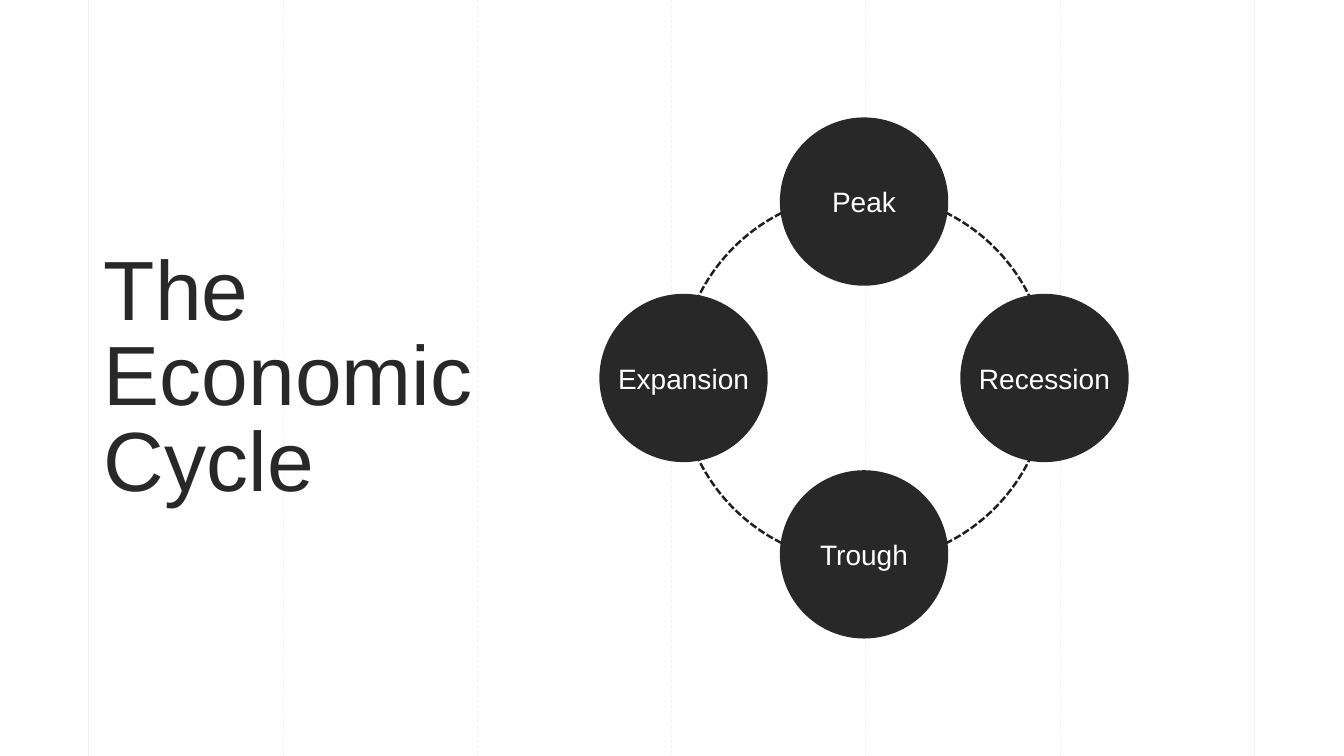
from dataclasses import dataclass

from lxml.etree import SubElement
from pptx import Presentation
from pptx.dml.color import RGBColor
from pptx.enum.dml import MSO_LINE
from pptx.enum.shapes import MSO_CONNECTOR, MSO_SHAPE
from pptx.enum.text import MSO_ANCHOR, MSO_AUTO_SIZE, PP_ALIGN
from pptx.oxml.ns import qn
from pptx.shapes.autoshape import Shape
from pptx.slide import Slide
from pptx.text.text import TextFrame
from pptx.util import Inches, Pt

COLORS = {"guide": "F2F2F2", "dark": "282828", "ring": "1E1E1E", "light": "FFFFFF"}
FONT = "Arial"
WIDTH, HEIGHT = 13.33, 7.5
LEFT, RIGHT, COLUMNS = 0.88, 12.44, 6
MID_X, MID_Y = 8.57, 3.75
RING, NODE = 3.66, 1.67
REACH_X, REACH_Y = 1.79, 1.75


@dataclass
class Phase:
    name: str
    dx: int
    dy: int


PHASES = [
    Phase("Peak", 0, -1),
    Phase("Recession", 1, 0),
    Phase("Trough", 0, 1),
    Phase("Expansion", -1, 0),
]


def color(name: str) -> RGBColor:
    return RGBColor.from_string(COLORS[name])


def style(frame: TextFrame, size: int, tint: str, align: PP_ALIGN) -> None:
    frame.vertical_anchor = MSO_ANCHOR.MIDDLE
    frame.auto_size = MSO_AUTO_SIZE.NONE
    for para in frame.paragraphs:
        para.alignment = align
        for run in para.runs:
            run.font.name = FONT
            run.font.size = Pt(size)
            run.font.color.rgb = color(tint)


def guide(slide: Slide, index: int) -> None:
    x = Inches(LEFT + index * (RIGHT - LEFT) / COLUMNS)
    line = slide.shapes.add_connector(MSO_CONNECTOR.STRAIGHT, x, 0, x, Inches(HEIGHT))
    line.line.color.rgb = color("guide")
    line.line.width = Pt(0.5)
    if 0 < index < COLUMNS:
        line.line.dash_style = MSO_LINE.DASH
    SubElement(line._element.spPr, qn("a:effectLst"))


def heading(slide: Slide) -> None:
    title = slide.shapes.title
    slide.shapes.element.append(title.element)
    title.left, title.top = Inches(1.03), Inches(0.88)
    title.width, title.height = Inches(4.78), Inches(5.58)
    frame = title.text_frame
    frame.text = "The\vEconomic\vCycle"
    frame.word_wrap = True
    frame.margin_left = frame.margin_right = frame.margin_bottom = 0
    frame.margin_top = Inches(0.2)
    style(frame, 60, "dark", PP_ALIGN.LEFT)
    para = frame.paragraphs[0]
    para.line_spacing = 0.85
    para.space_after = Pt(12)


def circle(slide: Slide, x: float, y: float, size: float) -> Shape:
    shape = slide.shapes.add_shape(
        MSO_SHAPE.OVAL,
        Inches(x - size / 2),
        Inches(y - size / 2),
        Inches(size),
        Inches(size),
    )
    shape.shadow.inherit = False
    return shape


def ring(slide: Slide) -> None:
    shape = circle(slide, MID_X, MID_Y, RING)
    shape.fill.background()
    shape.line.color.rgb = color("ring")
    shape.line.width = Pt(1.75)
    shape.line.dash_style = MSO_LINE.SQUARE_DOT


def node(slide: Slide, phase: Phase) -> None:
    x = MID_X + phase.dx * REACH_X
    y = MID_Y + phase.dy * REACH_Y
    shape = circle(slide, x, y, NODE)
    shape.fill.solid()
    shape.fill.fore_color.rgb = color("dark")
    shape.line.fill.background()
    frame = shape.text_frame
    frame.text = phase.name
    frame.word_wrap = False
    style(frame, 20, "light", PP_ALIGN.CENTER)


def main() -> None:
    deck = Presentation()
    deck.slide_width, deck.slide_height = Inches(WIDTH), Inches(HEIGHT)
    slide = deck.slides.add_slide(deck.slide_layouts[5])
    for index in range(COLUMNS + 1):
        guide(slide, index)
    heading(slide)
    ring(slide)
    for phase in PHASES:
        node(slide, phase)
    deck.save("out.pptx")


if __name__ == "__main__":
    main()
